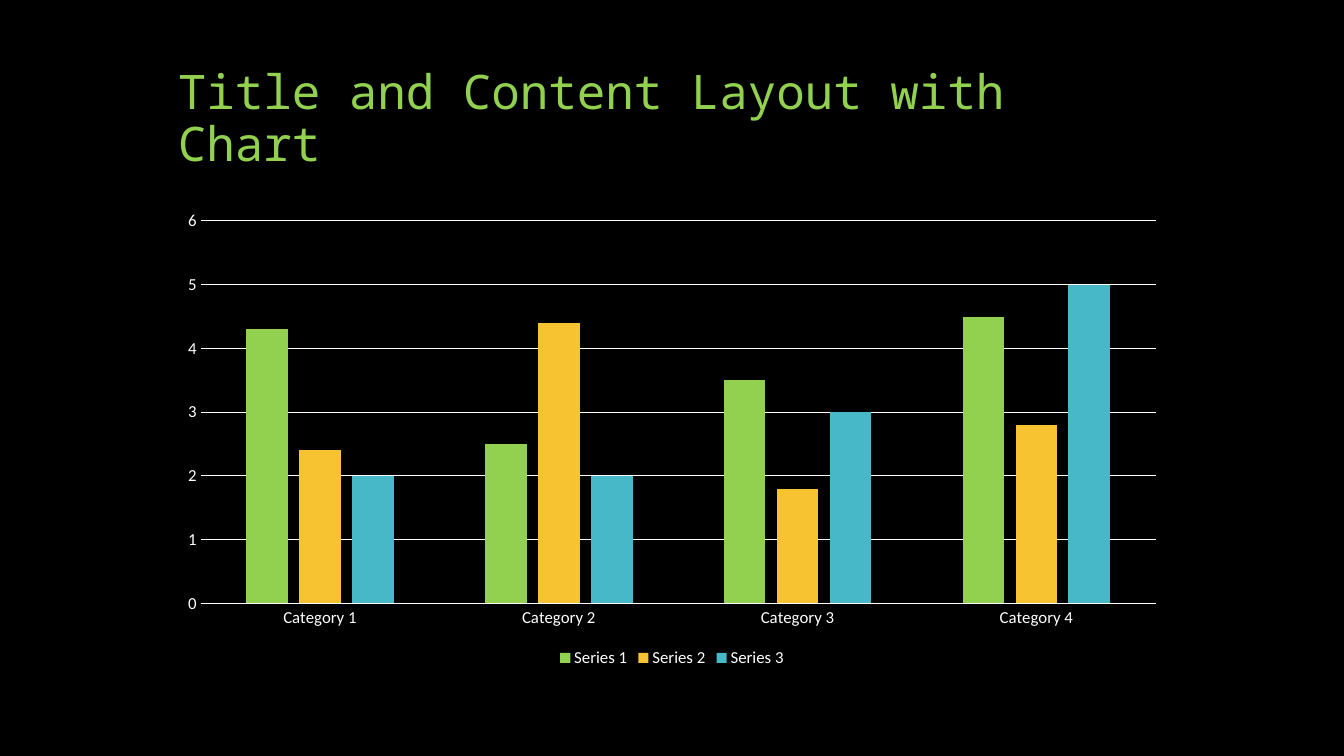
import pptx
import pptx.chart.data
import pptx.dml.color
import pptx.enum.chart
import pptx.enum.text
import pptx.util

Pt = pptx.util.Pt

COLORS = {
    "background": "000000",
    "text": "FFFFFF",
    "green": "92D050",
    "yellow": "F7C331",
    "blue": "47B8C7",
}
TITLE_FONT = "Noto Sans Mono"
CHART_FONT = "Calibri"
CATEGORIES = ["Category 1", "Category 2", "Category 3", "Category 4"]
SERIES = [
    ("Series 1", (4.3, 2.5, 3.5, 4.5), "green"),
    ("Series 2", (2.4, 4.4, 1.8, 2.8), "yellow"),
    ("Series 3", (2, 2, 3, 5), "blue"),
]


def rgb(name):
    return pptx.dml.color.RGBColor.from_string(COLORS[name])


def style_font(font, name, size, color):
    font.name = name
    font.size = Pt(size)
    font.color.rgb = rgb(color)


def style_line(line):
    line.color.rgb = rgb("text")
    line.width = Pt(0.75)


def add_title(slide, left, top, width, height):
    shape = slide.shapes.add_textbox(Pt(left), Pt(top), Pt(width), Pt(height))
    frame = shape.text_frame
    frame.word_wrap = True
    frame.vertical_anchor = pptx.enum.text.MSO_ANCHOR.BOTTOM
    paragraph = frame.paragraphs[0]
    paragraph.line_spacing = 0.9
    run = paragraph.add_run()
    run.text = "Title and Content Layout with Chart"
    style_font(run.font, TITLE_FONT, 34, "green")


def add_column_chart(slide, left, top, width, height):
    data = pptx.chart.data.CategoryChartData()
    data.categories = CATEGORIES
    for name, values, _ in SERIES:
        data.add_series(name, values)
    chart = slide.shapes.add_chart(
        pptx.enum.chart.XL_CHART_TYPE.COLUMN_CLUSTERED,
        Pt(left), Pt(top), Pt(width), Pt(height), data,
    ).chart
    chart.has_title = False
    style_font(chart.font, CHART_FONT, 12, "text")

    plot = chart.plots[0]
    plot.vary_by_categories = False
    plot.gap_width = 219
    plot.overlap = -27
    for series, (_, _, color) in zip(plot.series, SERIES):
        series.format.fill.solid()
        series.format.fill.fore_color.rgb = rgb(color)

    for axis in (chart.category_axis, chart.value_axis):
        axis.major_tick_mark = pptx.enum.chart.XL_TICK_MARK.NONE
        axis.minor_tick_mark = pptx.enum.chart.XL_TICK_MARK.NONE
        style_font(axis.tick_labels.font, CHART_FONT, 12, "text")
    style_line(chart.category_axis.format.line)
    chart.value_axis.format.line.fill.background()
    chart.value_axis.has_major_gridlines = True
    style_line(chart.value_axis.major_gridlines.format.line)

    chart.has_legend = True
    chart.legend.position = pptx.enum.chart.XL_LEGEND_POSITION.BOTTOM
    chart.legend.include_in_layout = False
    style_font(chart.legend.font, CHART_FONT, 12, "text")


def build_chart_slide(presentation):
    slide = presentation.slides.add_slide(presentation.slide_layouts[6])
    slide.background.fill.solid()
    slide.background.fill.fore_color.rgb = rgb("background")
    add_title(slide, 120, 36, 720, 90)
    add_column_chart(slide, 120, 144, 720, 336)


def main():
    presentation = pptx.Presentation()
    presentation.slide_width = Pt(960)
    presentation.slide_height = Pt(540)
    build_chart_slide(presentation)
    presentation.save("out.pptx")


if __name__ == "__main__":
    main()
